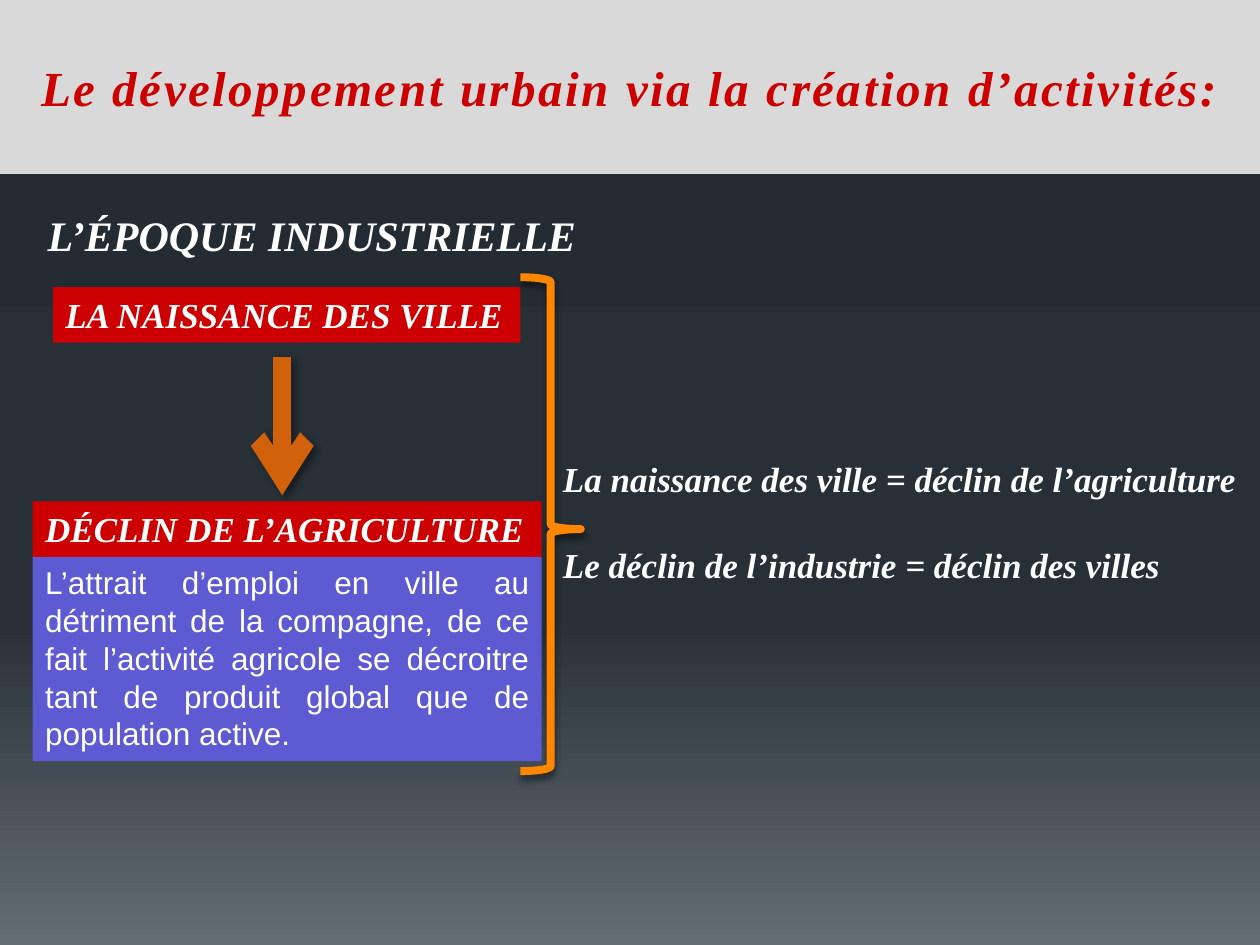
from copy import deepcopy
from lxml import etree
from pptx import Presentation
from pptx.dml.color import RGBColor
from pptx.enum.shapes import MSO_CONNECTOR, MSO_SHAPE
from pptx.enum.text import MSO_ANCHOR as ANCHOR, PP_ALIGN as ALIGN
from pptx.oxml import parse_xml
from pptx.oxml.ns import nsdecls, qn
from pptx.util import Inches, Pt

COLORS = {"title_band": "D9D9D9", "red": "CC0000", "violet": "5D5AD2", "white": "FFFFFF",
          "arrow": "D2610C", "brace": "FF8600", "shadow": "000000"}
BACKGROUND = [(0, "242C33"), (0.65, "273037"), (1, "636D76")]
SERIF = "Times New Roman"


def add_text(page, place, lines, size, color="white", fill=None, font=SERIF,
             strong=True, align=ALIGN.LEFT, wrap=False, anchor=ANCHOR.TOP, gap=0):
    """Add a text box, or a filled rectangle when a fill is given."""
    place = [Inches(length) for length in place]
    if fill:
        box = page.shapes.add_shape(MSO_SHAPE.RECTANGLE, *place)
        box.shadow.inherit = False
        box.fill.solid()
        box.fill.fore_color.rgb = RGBColor.from_string(COLORS[fill])
        box.line.fill.background()
    else:
        box = page.shapes.add_textbox(*place)
    frame = box.text_frame
    frame.text = "\n".join(lines)
    frame.word_wrap = wrap
    frame.vertical_anchor = anchor
    for index, para in enumerate(frame.paragraphs):
        para.alignment = align
        if index:
            para.space_before = Pt(gap)
        for span in para.runs:
            span.font.name = font
            span.font.size = Pt(size)
            span.font.bold = span.font.italic = strong
            span.font.color.rgb = RGBColor.from_string(COLORS[color])
    return box


def style_line(shape, color, width, opacity, blur, distance, angle):
    """Set the outline and an outer shadow."""
    shape.line.color.rgb = RGBColor.from_string(COLORS[color])
    shape.line.width = Pt(width)
    shape._element.spPr.append(parse_xml(
        f'<a:effectLst {nsdecls("a")}><a:outerShdw blurRad="{Pt(blur)}" dist="{Pt(distance)}" '
        f'dir="{angle * 60000}" rotWithShape="0"><a:srgbClr val="{COLORS["shadow"]}">'
        f'<a:alpha val="{opacity * 1000}"/></a:srgbClr></a:outerShdw></a:effectLst>'))


deck = Presentation()
deck.slide_width, deck.slide_height = Inches(10), Inches(7.5)
page = deck.slides.add_slide(deck.slide_layouts[6])

# Background gradient, top to bottom
fill = page.background.fill
fill.gradient()
fill.gradient_angle = 270
stop_list = page.background._cSld.find(".//" + qn("a:gsLst"))
stop_list.append(deepcopy(stop_list[-1]))
for stop, (position, color) in zip(fill.gradient_stops, BACKGROUND):
    stop.position = position
    stop.color.rgb = RGBColor.from_string(color)

# Title band and heading
title = add_text(page, (0, 0, 10, 1.38), ["Le développement urbain via la création d’activités:"],
                 28, "red", "title_band", align=ALIGN.CENTER, wrap=True, anchor=ANCHOR.MIDDLE)
title.text_frame.paragraphs[0].runs[0].font._element.set("spc", "150")
add_text(page, (0.28, 1.61, 4.44, 0.5), ["L’ÉPOQUE INDUSTRIELLE"], 24)

# Cause, arrow and effect
add_text(page, (0.42, 2.28, 3.71, 0.44), ["LA NAISSANCE DES VILLE"], 20, fill="red")
arrow = page.shapes.add_connector(MSO_CONNECTOR.STRAIGHT, Inches(2.24), Inches(2.83),
                                  Inches(2.24), Inches(3.93))
style_line(arrow, "arrow", 10.25, opacity=40, blur=4, distance=3, angle=45)
etree.SubElement(arrow.line._get_or_add_ln(), qn("a:tailEnd"), type="arrow")
add_text(page, (0.26, 3.98, 4.04, 0.44), ["DÉCLIN DE L’AGRICULTURE"], 20, fill="red")
add_text(page, (0.26, 4.42, 4.04, 1.62),
         ["L’attrait d’emploi en ville au détriment de la compagne, de ce fait l’activité "
          "agricole se décroitre tant de produit global que de population active."],
         18, fill="violet", font="Arial", strong=False, align=ALIGN.JUSTIFY, wrap=True)

# Brace and conclusions
brace = page.shapes.add_shape(MSO_SHAPE.RIGHT_BRACE, Inches(4.13), Inches(2.2),
                              Inches(0.48), Inches(3.92))
brace.adjustments[0], brace.adjustments[1] = 0.08, 0.51
brace.fill.background()
style_line(brace, "brace", 4.5, opacity=48, blur=3.8, distance=3, angle=90)
add_text(page, (4.37, 3.58, 5.7, 1.11),
         ["La naissance des ville = déclin de l’agriculture",
          "Le déclin de l’industrie = déclin des villes"], 20, gap=25)

deck.save("out.pptx")
